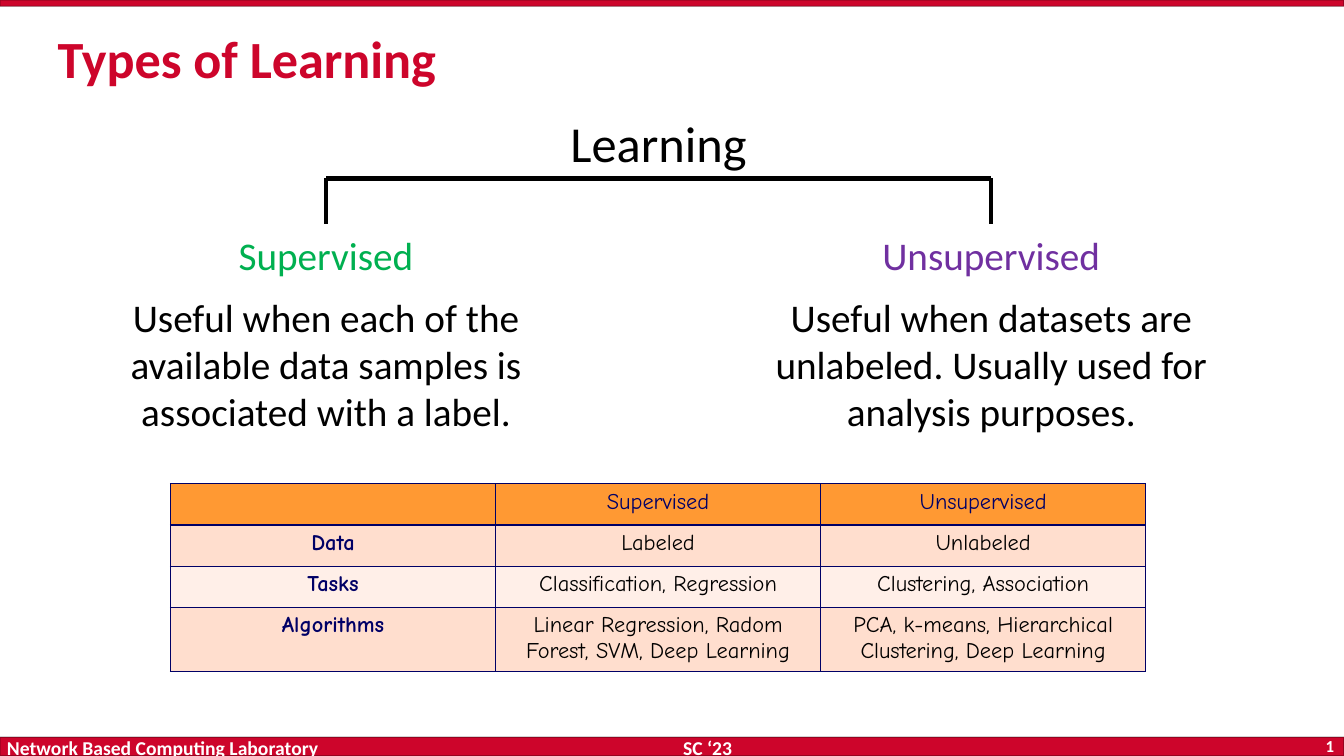
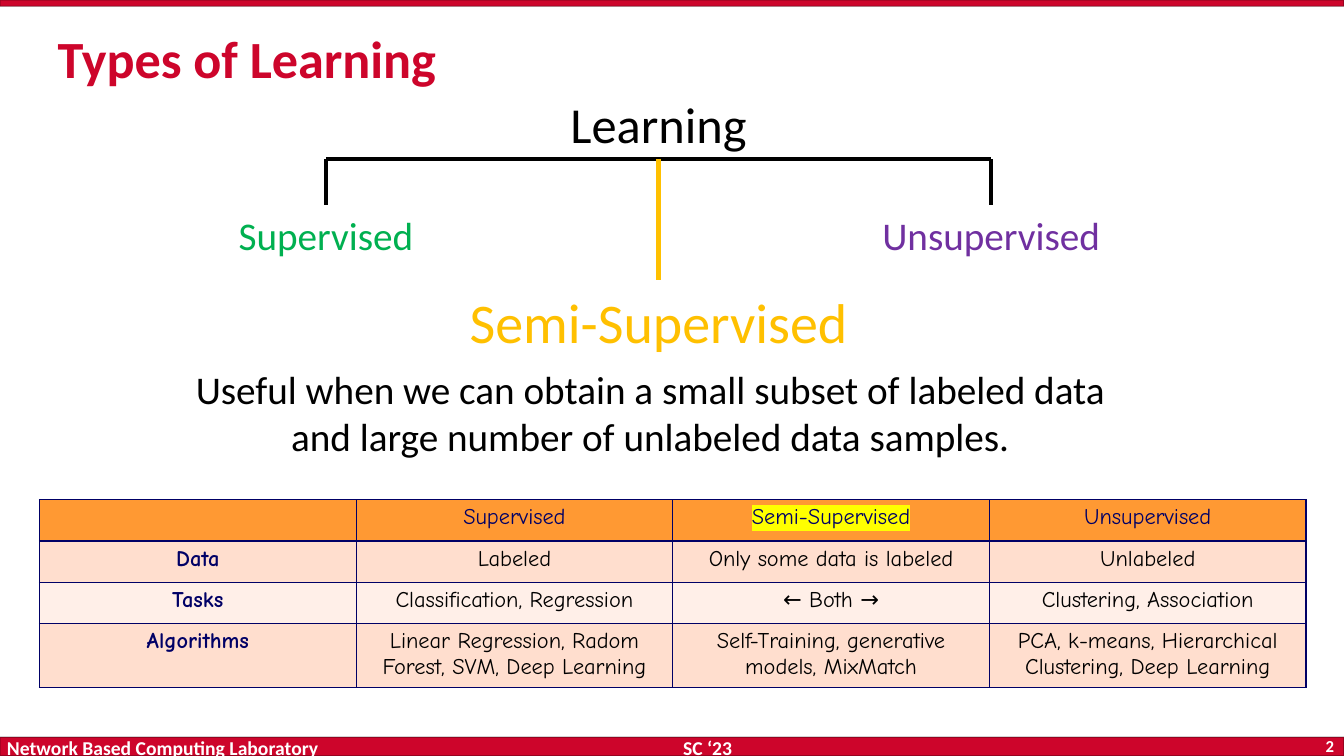
from dataclasses import dataclass

from lxml import etree
from pptx import Presentation
from pptx.dml.color import RGBColor
from pptx.enum import shapes, text
from pptx.oxml.ns import qn
from pptx import util as u


@dataclass(frozen=True)
class Theme:
    # Colours
    red: str = "CD052B"
    white: str = "FFFFFF"
    black: str = "000000"
    green: str = "00B050"
    purple: str = "7030A0"
    gold: str = "FFC000"
    navy: str = "000066"
    orange: str = "FF9933"
    peach: str = "FFDECE"
    pale: str = "FFEFE8"
    yellow: str = "FFFF00"
    # Fonts and type sizes
    body_font: str = "Calibri"
    table_font: str = "Comic Neue"
    title: float = 37.3
    accent: int = 40
    heading: int = 36
    body: int = 28
    cell: int = 16
    footer: int = 14
    number: int = 12
    # Line widths
    branch: int = 3
    border: int = 1


THEME = Theme()
COLUMNS, ROWS = 32, 18          # square grid units on the slide
CENTER, SPREAD = 15.68, 7.92    # tree axis and distance to each branch
LEFT, RIGHT = CENTER - SPREAD, CENTER + SPREAD
ALIGN = text.PP_ALIGN
ANCHOR = text.MSO_ANCHOR


def add_xml(parent, tag, **attributes):
    return etree.SubElement(parent, qn(tag), attributes)


class Deck:
    """Holds the style, the presentation and the current slide."""

    def __init__(self, theme):
        self.theme = theme
        self.presentation = Presentation()
        self.presentation.slide_width = u.Inches(13.33)
        self.presentation.slide_height = u.Inches(7.5)
        self.slide = None

    def x(self, columns):
        return round(self.presentation.slide_width * columns / COLUMNS)

    def y(self, rows):
        return round(self.presentation.slide_height * rows / ROWS)

    def box(self, left, top, width, height):
        return self.x(left), self.y(top), self.x(width), self.y(height)

    def style(self, paragraph, size, color, bold=False, font=None, align=ALIGN.CENTER):
        paragraph.alignment = align
        for run in paragraph.runs:
            run.font.size = u.Pt(size)
            run.font.bold = bold
            run.font.color.rgb = RGBColor.from_string(color)
            run.font.name = font or self.theme.body_font

    # Slide frame: bands, footer and title
    def new_slide(self, title, number):
        theme = self.theme
        self.slide = self.presentation.slides.add_slide(self.presentation.slide_layouts[6])
        self.band(17.55, 0.45)
        self.band(0, 0.15)
        footer = dict(color=theme.white, bold=True, inset=(0.1, 0.05))
        self.label("SC ‘23", 13.75, 17.59, 6.2, 0.6, theme.footer,
                   anchor=ANCHOR.BOTTOM, **footer)
        self.label("Network Based Computing Laboratory", -0.07, 17.57, 9.14, 0.62,
                   theme.footer, align=ALIGN.LEFT, anchor=ANCHOR.BOTTOM, **footer)
        page = self.label(str(number), 29.88, 17.55, 2.12, 0.43, theme.number,
                          align=ALIGN.RIGHT, anchor=ANCHOR.MIDDLE, **footer)
        # Turn the page number's run into a slide number field
        field = page.text_frame.paragraphs[0].runs[0]._r
        field.tag = qn("a:fld")
        field.set("id", "{B6F15528-21DE-4FAA-801E-634DDDAF4B2B}")
        field.set("type", "slidenum")
        self.label(title, 1.06, 0.46, 28.34, 2.04, theme.title, theme.red,
                   bold=True, align=ALIGN.LEFT)

    def band(self, top, height):
        band = self.slide.shapes.add_shape(shapes.MSO_SHAPE.RECTANGLE,
                                           *self.box(0, top, COLUMNS, height))
        band.shadow.inherit = False
        band.fill.solid()
        band.fill.fore_color.rgb = RGBColor.from_string(self.theme.red)
        band.line.width = u.Pt(self.theme.border)
        band.line.color.rgb = RGBColor.from_string(self.theme.black)
        color = band.line._ln.find(".//" + qn("a:srgbClr"))
        add_xml(color, "a:alpha", val="25000")

    # Text
    def label(self, words, left, top, width, height, size, color, bold=False,
              align=ALIGN.CENTER, anchor=ANCHOR.TOP, inset=(0.13, 0.07)):
        label = self.slide.shapes.add_textbox(*self.box(left, top, width, height))
        frame = label.text_frame
        frame.word_wrap = True
        frame.vertical_anchor = anchor
        frame.margin_left = frame.margin_right = u.Inches(inset[0])
        frame.margin_top = frame.margin_bottom = u.Inches(inset[1])
        frame.text = words
        self.style(frame.paragraphs[0], size, color, bold, align=align)
        return label

    def centered(self, words, middle, top, width, height, size, color):
        return self.label(words, middle - width / 2, top, width, height, size, color)

    # Lines
    def line(self, start, end, color, source=None, target=None):
        line = self.slide.shapes.add_connector(
            shapes.MSO_CONNECTOR.STRAIGHT,
            self.x(start[0]), self.y(start[1]), self.x(end[0]), self.y(end[1]))
        if source is not None:
            line.begin_connect(source, 2)
        if target is not None:
            line.end_connect(target, 0)
        line.line.width = u.Pt(self.theme.branch)
        line.line.color.rgb = RGBColor.from_string(color)
        add_xml(line._element.spPr, "a:effectLst")

    # Learning tree: heading, two branches and their names
    def tree(self, top):
        theme = self.theme
        bar, drop = top + 1.75, top + 2.83
        heading = self.centered("Learning", CENTER, top, 5.76, 1.75,
                                theme.heading, theme.black)
        for name, middle, color in (("Supervised", LEFT, theme.green),
                                    ("Unsupervised", RIGHT, theme.purple)):
            branch = self.centered(name, middle, drop, 5.95, 1.5, theme.body, color)
            self.line((CENTER, bar), (middle, bar), theme.black, source=heading)
            self.line((middle, bar), (middle, drop), theme.black, target=branch)
        return heading

    # Comparison table
    def table(self, columns, left, top, column_width, marked=None):
        theme = self.theme
        heights = (0.98, 0.98, 0.98, 1.46)
        fills = (theme.orange, theme.peach, theme.pale, theme.peach)
        table = self.slide.shapes.add_table(
            len(heights), len(columns),
            *self.box(left, top, column_width * len(columns), sum(heights))).table
        for row, height in zip(table.rows, heights):
            row.height = self.y(height)
        for column, words in enumerate(columns):
            table.columns[column].width = self.x(column_width)
            for row, word in enumerate(words):
                cell = table.cell(row, column)
                self.borders(cell)
                cell.fill.solid()
                cell.fill.fore_color.rgb = RGBColor.from_string(fills[row])
                cell.text_frame.text = word
                paragraph = cell.text_frame.paragraphs[0]
                is_heading = row == 0 or column == 0
                self.style(paragraph, theme.cell,
                           theme.navy if is_heading else theme.black,
                           bold=column == 0, font=theme.table_font)
                if marked and word == marked:
                    self.highlight(paragraph.runs[0])

    def borders(self, cell):
        properties = cell._tc.get_or_add_tcPr()
        for side in ("a:lnL", "a:lnR", "a:lnT", "a:lnB"):
            border = add_xml(properties, side, w=str(u.Pt(self.theme.border)))
            fill = add_xml(border, "a:solidFill")
            add_xml(fill, "a:srgbClr", val=self.theme.navy)

    def highlight(self, run):
        properties = run._r.get_or_add_rPr()
        mark = add_xml(properties, "a:highlight")
        add_xml(mark, "a:srgbClr", val=self.theme.yellow)
        properties.find(qn("a:latin")).addprevious(mark)


TOPICS = ("", "Data", "Tasks", "Algorithms")
SUPERVISED = ("Supervised", "Labeled", "Classification, Regression",
              "Linear Regression, Radom Forest, SVM, Deep Learning")
SEMI_SUPERVISED = ("Semi-Supervised", "Only some data is labeled", "← Both →",
                   "Self-Training, generative models, MixMatch")
UNSUPERVISED = ("Unsupervised", "Unlabeled", "Clustering, Association",
                "PCA, k-means, Hierarchical Clustering, Deep Learning")


def two_types(deck):
    theme = deck.theme
    deck.new_slide("Types of Learning", 7)
    deck.tree(2.5)
    deck.table((TOPICS, SUPERVISED, UNSUPERVISED), 4.06, 11.52, 7.74)
    for middle, words in (
            (LEFT, "Useful when each of the available data samples is "
                   "associated with a label."),
            (RIGHT, "Useful when datasets are unlabeled. Usually used for "
                    "analysis purposes.")):
        deck.centered(words, middle, 6.82, 11.7, 3.77, theme.body, theme.black)


def three_types(deck):
    theme = deck.theme
    deck.new_slide("Types of Learning", 8)
    heading = deck.tree(2.04)
    semi = deck.centered("Semi-Supervised", CENTER, 6.67, 12.9, 2.09,
                         theme.accent, theme.gold)
    deck.line((CENTER, 3.79), (CENTER, 6.67), theme.gold, source=heading, target=semi)
    deck.centered("Useful when we can obtain a small subset of labeled data and "
                  "large number of unlabeled data samples.",
                  15.48, 8.54, 23.62, 3.77, theme.body, theme.black)
    deck.table((TOPICS, SUPERVISED, SEMI_SUPERVISED, UNSUPERVISED),
               0.94, 11.9, 7.54, marked="Semi-Supervised")


def main():
    deck = Deck(THEME)
    two_types(deck)
    three_types(deck)
    deck.presentation.save("out.pptx")


if __name__ == "__main__":
    main()
